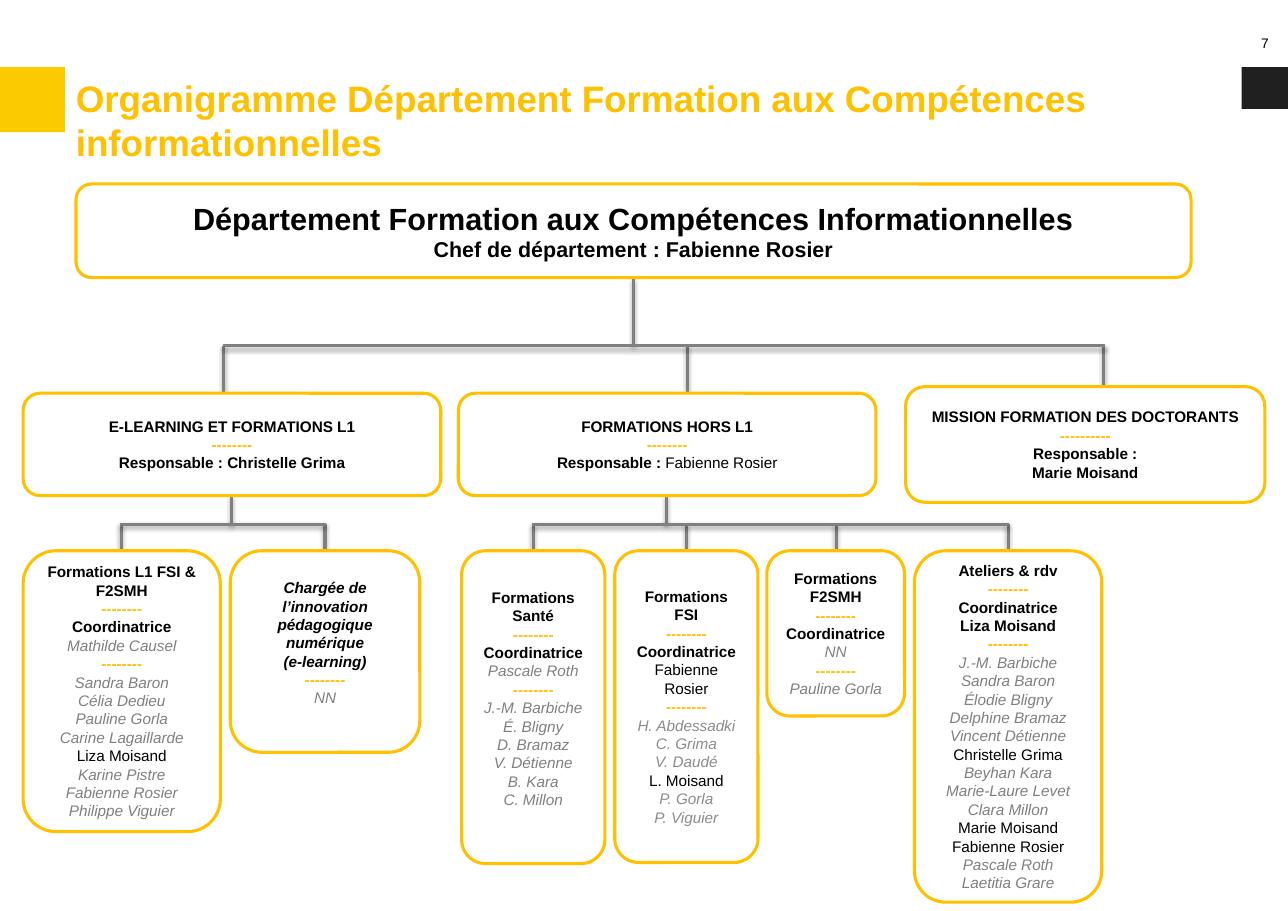
from dataclasses import dataclass

from lxml import etree
from pptx import Presentation
from pptx.dml.color import RGBColor
from pptx.enum.shapes import MSO_CONNECTOR, MSO_SHAPE
from pptx.enum.text import MSO_ANCHOR, PP_ALIGN
from pptx.oxml import parse_xml
from pptx.oxml.ns import nsdecls
from pptx.util import Inches, Pt


@dataclass(frozen=True)
class Theme:
    font: str = "Arial"
    gold: str = "FFC000"
    tab: str = "FBCA00"
    dark: str = "202020"
    black: str = "000000"
    white: str = "FFFFFF"
    grey: str = "808080"
    pale: str = "8C8C8C"
    title: int = 24
    head: int = 20
    chief: int = 14
    body: int = 10
    number: int = 9
    line: int = 2


T = Theme()

SHADOW = (
    f'<a:effectLst {nsdecls("a")}>'
    '<a:outerShdw blurRad="40000" dist="20000" dir="5400000" rotWithShape="0">'
    '<a:srgbClr val="000000"><a:alpha val="38000"/></a:srgbClr>'
    '</a:outerShdw></a:effectLst>'
)


# Text: a line is a list of (text, format) runs
def write(p, text, *, size=T.body, color=T.black, bold=False, italic=False):
    r = p.add_run()
    r.text = text
    r.font.name = T.font
    r.font.size = Pt(size)
    r.font.bold = bold
    r.font.italic = italic
    r.font.color.rgb = RGBColor.from_string(color)


def fill_lines(tf, lines, align=PP_ALIGN.CENTER):
    tf.word_wrap = True
    tf.vertical_anchor = MSO_ANCHOR.MIDDLE
    for i, runs in enumerate(lines):
        p = tf.add_paragraph() if i else tf.paragraphs[0]
        p.alignment = align
        for text, fmt in runs:
            write(p, text, **fmt)


def line(text, **fmt):
    return [(text, fmt)]


def bold(text, **fmt):
    return line(text, bold=True, **fmt)


def dashes(count=8):
    return bold("-" * count, color=T.gold)


def staff(*names, black=(), grey=T.grey):
    return [line(n) if n in black else line(n, color=grey, italic=True)
            for n in names]


def team(heading, coordinator, members):
    return [bold(heading), dashes(), bold("Coordinatrice"), coordinator,
            dashes(), *members]


# Shapes
def add_block(s, x, y, w, h, color):
    sp = s.shapes.add_shape(MSO_SHAPE.RECTANGLE, Inches(x), Inches(y), Inches(w), Inches(h))
    sp.shadow.inherit = False
    sp.fill.solid()
    sp.fill.fore_color.rgb = RGBColor.from_string(color)
    sp.line.fill.background()


def add_text(s, x, y, w, h, lines, align=PP_ALIGN.CENTER):
    sp = s.shapes.add_textbox(Inches(x), Inches(y), Inches(w), Inches(h))
    fill_lines(sp.text_frame, lines, align)


def add_box(s, x, y, w, h, lines, bottom=0.05):
    sp = s.shapes.add_shape(MSO_SHAPE.ROUNDED_RECTANGLE,
                            Inches(x), Inches(y), Inches(w), Inches(h))
    sp.shadow.inherit = False
    sp.fill.solid()
    sp.fill.fore_color.rgb = RGBColor.from_string(T.white)
    sp.line.color.rgb = RGBColor.from_string(T.gold)
    sp.line.width = Pt(T.line)
    fill_lines(sp.text_frame, lines)
    sp.text_frame.margin_bottom = Inches(bottom)


def add_link(s, x1, y1, x2, y2):
    c = s.shapes.add_connector(MSO_CONNECTOR.STRAIGHT,
                               Inches(x1), Inches(y1), Inches(x2), Inches(y2))
    c.line.color.rgb = RGBColor.from_string(T.grey)
    c.line.width = Pt(T.line)
    c._element.spPr.append(parse_xml(SHADOW))


def add_branch(s, stem_x, top, bar_y, drops, bottom):
    """Stem from the parent, a bar, and one drop to each child."""
    for x in drops:
        add_link(s, x, bar_y, x, bottom)
    add_link(s, stem_x, top, stem_x, bar_y)
    add_link(s, drops[0] - 0.01, bar_y, drops[-1] + 0.01, bar_y)


def main():
    prs = Presentation()
    prs.slide_width, prs.slide_height = Inches(11.69), Inches(8.27)
    s = prs.slides.add_slide(prs.slide_layouts[6])

    # Header
    add_block(s, 11.27, 0.61, 0.42, 0.38, T.dark)
    add_block(s, 0, 0.61, 0.59, 0.59, T.tab)
    add_text(s, 11.27, 0.17, 0.42, 0.44, [line("7", size=T.number)])
    add_text(s, 0.59, 0.61, 11.09, 0.96,
             [bold("Organigramme Département Formation aux Compétences informationnelles",
                   size=T.title, color=T.gold)], PP_ALIGN.LEFT)

    # Links, behind the boxes
    unit_y, team_y, bar_y = 3.57, 5, 4.76
    add_branch(s, 5.75, 2.53, 3.14, [2.03, 6.24, 10.02], unit_y)
    add_branch(s, 2.1, 4.5, bar_y, [1.1, 2.95], team_y)
    add_branch(s, 6.05, 4.5, bar_y, [4.84, 6.23, 7.59, 9.15], team_y)

    # Department
    add_box(s, 0.69, 1.67, 10.12, 0.85, [
        bold("Département Formation aux Compétences Informationnelles", size=T.head),
        bold("Chef de département : Fabienne Rosier", size=T.chief)])

    # Units
    add_box(s, 0.21, unit_y, 3.79, 0.93, [
        bold("E-LEARNING ET FORMATIONS L1"), dashes(),
        bold("Responsable : Christelle Grima")])
    add_box(s, 4.16, unit_y, 3.79, 0.93, [
        bold("FORMATIONS HORS L1"), dashes(),
        bold("Responsable : ") + line("Fabienne Rosier")])
    add_box(s, 8.22, 3.51, 3.26, 1.05, [
        bold("MISSION FORMATION DES DOCTORANTS"), dashes(10),
        bold("Responsable :"), bold("Marie Moisand")])

    # Teams: left, width, height, lines, bottom inset
    teams = [
        (0.21, 1.79, 2.55, team(
            "Formations L1 FSI & F2SMH", *staff("Mathilde Causel"),
            staff("Sandra Baron", "Célia Dedieu", "Pauline Gorla",
                  "Carine Lagaillarde", "Liza Moisand", "Karine Pistre",
                  "Fabienne Rosier", "Philippe Viguier", black=["Liza Moisand"])), 0.05),
        (2.09, 1.72, 1.83, [
            bold("Chargée de l’innovation pédagogique numérique", italic=True),
            bold("(e-learning)", italic=True), dashes(), *staff("NN")], 0.21),
        (4.19, 1.3, 2.84, team(
            "Formations Santé", *staff("Pascale Roth"),
            staff("J.-M. Barbiche", "É. Bligny", "D. Bramaz", "V. Détienne",
                  "B. Kara", "C. Millon")), 0.21),
        (5.58, 1.3, 2.83, team(
            "Formations FSI", line("Fabienne Rosier"),
            staff("H. Abdessadki", "C. Grima", "V. Daudé", "L. Moisand",
                  "P. Gorla", "P. Viguier", black=["L. Moisand"], grey=T.pale)), 0.05),
        (6.96, 1.25, 1.5, team(
            "Formations F2SMH", *staff("NN"), staff("Pauline Gorla")), 0.05),
        (8.3, 1.7, 3.19, team(
            "Ateliers & rdv", bold("Liza Moisand"),
            staff("J.-M. Barbiche", "Sandra Baron", "Élodie Bligny",
                  "Delphine Bramaz", "Vincent Détienne", "Christelle Grima",
                  "Beyhan Kara", "Marie-Laure Levet", "Clara Millon",
                  "Marie Moisand", "Fabienne Rosier", "Pascale Roth",
                  "Laetitia Grare",
                  black=["Christelle Grima", "Marie Moisand", "Fabienne Rosier"])), 0.05),
    ]
    for x, w, h, lines, bottom in teams:
        add_box(s, x, team_y, w, h, lines, bottom)

    prs.save("out.pptx")


if __name__ == "__main__":
    main()
